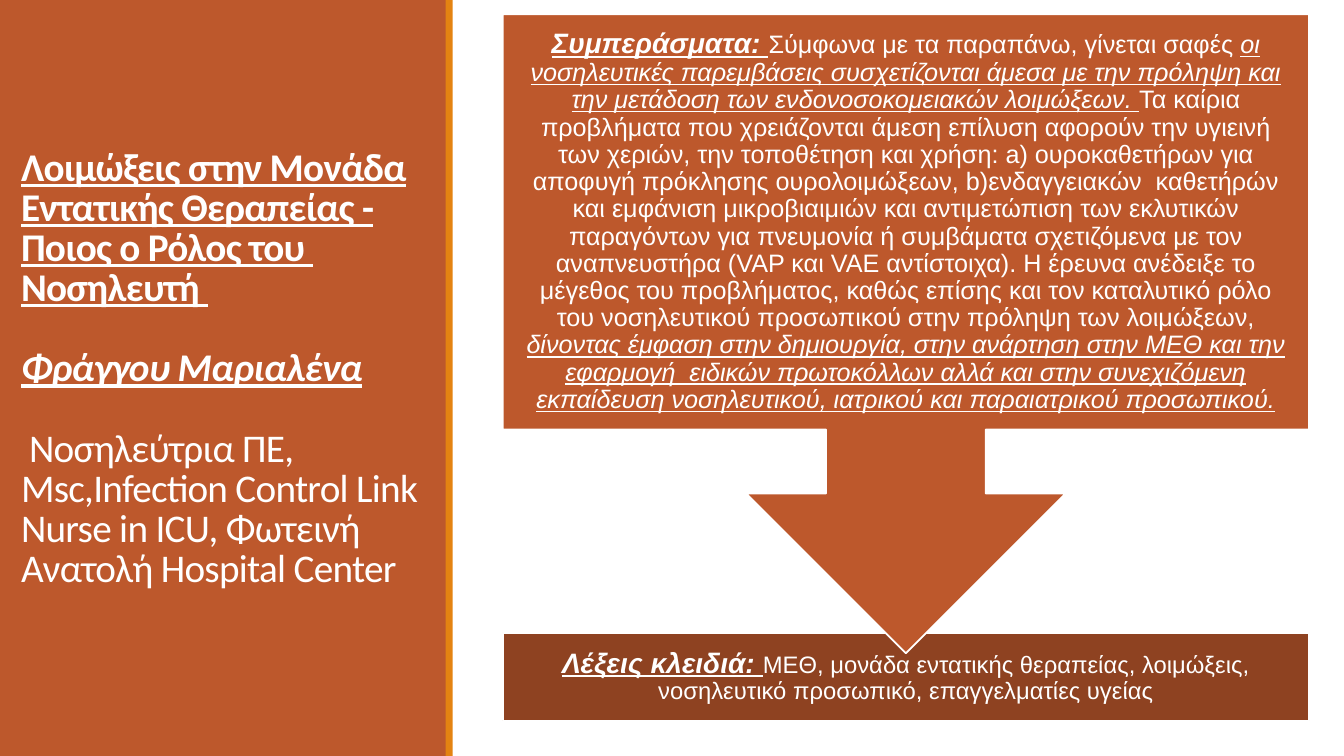
from dataclasses import dataclass

from pptx import Presentation
from pptx.dml.color import RGBColor
from pptx.enum.shapes import MSO_SHAPE
from pptx.enum.text import MSO_ANCHOR, MSO_AUTO_SIZE, PP_ALIGN
from pptx.shapes.autoshape import Shape
from pptx.slide import Slide
from pptx.text.text import TextFrame
from pptx.util import Cm, Pt

RECTANGLE = MSO_SHAPE.RECTANGLE
CALLOUT = MSO_SHAPE.UP_ARROW_CALLOUT
MIDDLE = MSO_ANCHOR.MIDDLE
NO_AUTOFIT = MSO_AUTO_SIZE.NONE
LEFT, CENTER = PP_ALIGN.LEFT, PP_ALIGN.CENTER
TITLE_ONLY = 5


@dataclass(frozen=True)
class Theme:
    rust: str = "BD582C"
    brown: str = "8E4221"
    orange: str = "E48312"
    white: str = "FFFFFF"
    title_font: str = "Calibri"
    body_font: str = "Arial"
    title_size: int = 28
    heading_size: int = 20
    body_size: int = 18
    keyword_size: int = 17
    outline: float = 1.25


@dataclass(frozen=True)
class Place:
    left: float
    top: float
    width: float
    height: float


@dataclass(frozen=True)
class Block:
    place: Place
    fill: str
    preset: MSO_SHAPE = RECTANGLE
    outlined: bool = False
    rotation: int = 0


@dataclass(frozen=True)
class Span:
    text: str
    size: int
    bold: bool = False
    italic: bool = False
    underline: bool = False


@dataclass(frozen=True)
class TextStyle:
    font: str
    align: PP_ALIGN
    line_spacing: float
    inset: Cm
    space_before: float = 0
    tracking: int = 0


THEME = Theme()

TITLE_STYLE = TextStyle(THEME.title_font, LEFT, 0.85, Cm(0.25), 28.8, -50)
BODY_STYLE = TextStyle(THEME.body_font, CENTER, 0.9, Cm(0.41))

TITLE_PLACE = Place(0.28, 0, 10.8, 18.64)
CONCLUSION_PLACE = Place(12.67, 0.36, 20.32, 10.46)

PANELS = [
    Block(Place(0, 0, 11.25, 19.05), THEME.rust),
    Block(Place(11.23, 0, 0.18, 19.05), THEME.orange),
]
KEYWORD_BOX = Block(Place(12.67, 15.95, 20.32, 2.21), THEME.brown, outlined=True)
CONCLUSION_ARROW = Block(Place(12.67, 0.36, 20.32, 16.1), THEME.rust, CALLOUT, True, 180)

TITLE = [
    [Span("Λοιμώξεις στην Μονάδα Εντατικής Θεραπείας - Ποιος ο Ρόλος του \nΝοσηλευτή ",
          THEME.title_size, bold=True, underline=True)],
    [Span("Φράγγου Μαριαλένα", THEME.title_size, True, True, True)],
    [Span(" Νοσηλεύτρια ΠΕ, Μsc,Infection Control Link Nurse in ICU, "
          "Φωτεινή Ανατολή Hospital Center", THEME.title_size)],
]
KEYWORDS = [[
    Span("Λέξεις κλειδιά: ", THEME.heading_size, True, True, True),
    Span("ΜΕΘ, μονάδα εντατικής θεραπείας, λοιμώξεις, νοσηλευτικό προσωπικό, "
         "επαγγελματίες υγείας", THEME.keyword_size),
]]
CONCLUSIONS = [[
    Span("Συμπεράσματα: ", THEME.heading_size, True, True, True),
    Span("Σύμφωνα με τα παραπάνω, γίνεται σαφές ", THEME.body_size),
    Span("oι νοσηλευτικές παρεμβάσεις συσχετίζονται άμεσα με την πρόληψη και την "
         "μετάδοση των ενδονοσοκομειακών λοιμώξεων. ",
         THEME.body_size, italic=True, underline=True),
    Span("Τα καίρια προβλήματα που χρειάζονται άμεση επίλυση αφορούν την υγιεινή των "
         "χεριών, την τοποθέτηση και χρήση: a) ουροκαθετήρων για αποφυγή πρόκλησης "
         "ουρολοιμώξεων, b)ενδαγγειακών  καθετήρών και εμφάνιση μικροβιαιμιών και "
         "αντιμετώπιση των εκλυτικών παραγόντων για πνευμονία ή συμβάματα σχετιζόμενα "
         "με τον αναπνευστήρα (VAP και VAE αντίστοιχα). Η έρευνα ανέδειξε το μέγεθος "
         "του προβλήματος, καθώς επίσης και τον καταλυτικό ρόλο του νοσηλευτικού "
         "προσωπικού στην πρόληψη των λοιμώξεων, ", THEME.body_size),
    Span("δίνοντας έμφαση στην δημιουργία, στην ανάρτηση στην ΜΕΘ και την εφαρμογή  "
         "ειδικών πρωτοκόλλων αλλά και στην συνεχιζόμενη εκπαίδευση νοσηλευτικού, "
         "ιατρικού και παραιατρικού προσωπικού.",
         THEME.body_size, italic=True, underline=True),
]]


def set_attributes(target: object, values: dict[str, object]) -> None:
    for name, value in values.items():
        setattr(target, name, value)


def lengths(place: Place) -> tuple[Cm, Cm, Cm, Cm]:
    return Cm(place.left), Cm(place.top), Cm(place.width), Cm(place.height)


def draw_block(page: Slide, block: Block) -> Shape:
    box = page.shapes.add_shape(block.preset, *lengths(block.place))
    box.shadow.inherit = False
    box.rotation = block.rotation
    box.fill.solid()
    box.fill.fore_color.rgb = RGBColor.from_string(block.fill)
    if block.outlined:
        box.line.color.rgb = RGBColor.from_string(THEME.white)
        box.line.width = Pt(THEME.outline)
    else:
        box.line.fill.background()
    return box


def write_text(frame: TextFrame, paragraphs: list[list[Span]], style: TextStyle) -> None:
    sides = ("left", "top", "right", "bottom")
    set_attributes(frame, {f"margin_{side}": style.inset for side in sides} | {
        "word_wrap": True, "auto_size": NO_AUTOFIT, "vertical_anchor": MIDDLE})
    for index, spans in enumerate(paragraphs):
        para = frame.add_paragraph() if index else frame.paragraphs[0]
        set_attributes(para, {
            "alignment": style.align,
            "line_spacing": style.line_spacing,
            "space_before": Pt(style.space_before if index else 0),
            "space_after": Pt(0),
        })
        for span in spans:
            for number, line in enumerate(span.text.split("\n")):
                if number:
                    para.add_line_break()
                run = para.add_run()
                run.text = line
                set_attributes(run.font, {
                    "name": style.font, "size": Pt(span.size), "bold": span.bold,
                    "italic": span.italic, "underline": span.underline})
                run.font.color.rgb = RGBColor.from_string(THEME.white)
                run.font._element.set("spc", str(style.tracking))


def write_title(page: Slide) -> None:
    title = page.shapes.title
    names = ("left", "top", "width", "height")
    set_attributes(title, dict(zip(names, lengths(TITLE_PLACE))))
    write_text(title.text_frame, TITLE, TITLE_STYLE)
    title.element.getparent().append(title.element)


def main() -> None:
    deck = Presentation()
    set_attributes(deck, {"slide_width": Cm(33.87), "slide_height": Cm(19.05)})
    page = deck.slides.add_slide(deck.slide_layouts[TITLE_ONLY])
    for panel in PANELS:
        draw_block(page, panel)
    write_title(page)
    keyword_box = draw_block(page, KEYWORD_BOX)
    write_text(keyword_box.text_frame, KEYWORDS, BODY_STYLE)
    draw_block(page, CONCLUSION_ARROW)
    conclusion_box = page.shapes.add_textbox(*lengths(CONCLUSION_PLACE))
    write_text(conclusion_box.text_frame, CONCLUSIONS, BODY_STYLE)
    deck.save("out.pptx")


if __name__ == "__main__":
    main()
